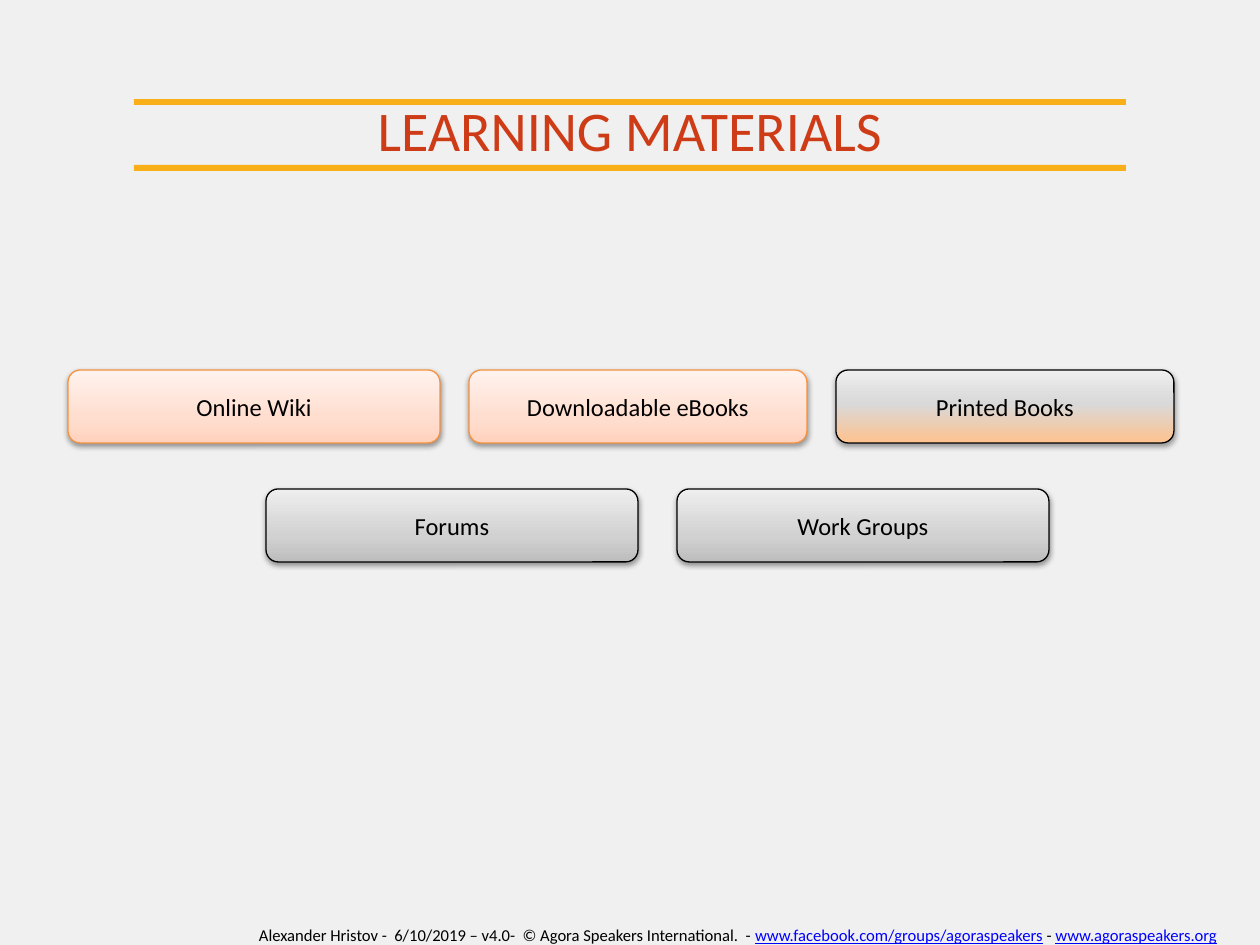
from dataclasses import dataclass

from lxml import etree
from pptx import Presentation
from pptx import util as u
from pptx.dml.color import RGBColor
from pptx.enum import shapes, text
from pptx.oxml import ns

PX = 914400 // 126


@dataclass(frozen=True)
class Theme:
    font: str = "Calibri"
    background: str = "F0F0F0"
    bar: str = "F8AF18"
    title: str = "CE3C17"
    ink: str = "000000"
    web: str = "0000FF"
    accent: str = "F69240"
    title_size: float = 32
    button_size: float = 14
    footer_size: float = 9.5
    peach: tuple = ((0, "FFD2BD"), (35, "FFDED0"), (100, "FFF2ED"))
    mixed: tuple = ((0, "FFC28E"), (54, "D9D9D9"), (100, "EEEEEE"))
    grey: tuple = ((0, "BDBDBD"), (35, "D1D1D1"), (100, "EEEEEE"))


THEME = Theme()


def px(*lengths):
    return [length * PX for length in lengths]


def colour(code):
    return RGBColor.from_string(code)


def style(span, size, code):
    span.font.name = THEME.font
    span.font.size = u.Pt(size)
    span.font.color.rgb = colour(code)


def add_node(parent, tag, **attributes):
    return etree.SubElement(parent, ns.qn(tag), attributes)


def fill_gradient(shape, stops):
    shape.fill.gradient()
    shape.fill.gradient_angle = 90
    stop_list = shape._element.spPr.find(".//" + ns.qn("a:gsLst"))
    for stop in list(stop_list):
        stop_list.remove(stop)
    for position, code in stops:
        stop = add_node(stop_list, "a:gs", pos=str(position * 1000))
        add_node(stop, "a:srgbClr", val=code)


def add_shadow(shape):
    shape.shadow.inherit = False
    effects = shape._element.spPr.find(ns.qn("a:effectLst"))
    shadow = add_node(effects, "a:outerShdw", blurRad="40000", dist="20000",
                      dir="5400000", rotWithShape="0")
    tint = add_node(shadow, "a:srgbClr", val=THEME.ink)
    add_node(tint, "a:alpha", val="38000")


def add_title(page, left, top, width, height):
    for offset in (10, height):
        bar = page.shapes.add_shape(shapes.MSO_SHAPE.RECTANGLE,
                                    *px(left + 133, top + offset, width - 266, 6))
        bar.shadow.inherit = False
        bar.fill.solid()
        bar.fill.fore_color.rgb = colour(THEME.bar)
        bar.line.fill.background()
    title = page.shapes.title
    title.left, title.top, title.width, title.height = px(left, top, width, height)
    frame = title.text_frame
    frame.text = "LEARNING MATERIALS"
    frame.auto_size = text.MSO_AUTO_SIZE.NONE
    frame.vertical_anchor = text.MSO_ANCHOR.TOP
    para = frame.paragraphs[0]
    para.alignment = text.PP_ALIGN.CENTER
    style(para.runs[0], THEME.title_size, THEME.title)


def add_button(page, left, top, width, height, label, stops, outline):
    button = page.shapes.add_shape(shapes.MSO_SHAPE.ROUNDED_RECTANGLE,
                                   *px(left, top, width, height))
    fill_gradient(button, stops)
    button.line.color.rgb = colour(outline)
    button.line.width = u.Pt(0.75)
    add_shadow(button)
    frame = button.text_frame
    frame.text = label
    frame.vertical_anchor = text.MSO_ANCHOR.MIDDLE
    para = frame.paragraphs[0]
    para.alignment = text.PP_ALIGN.CENTER
    style(para.runs[0], THEME.button_size, THEME.ink)


def add_button_row(page, left, top, height, gap, buttons):
    for label, width, stops, outline in buttons:
        add_button(page, left, top, width, height, label, stops, outline)
        left += width + gap


def add_footer(page, left, top, width, height):
    box = page.shapes.add_textbox(*px(left, top, width, height))
    box.text_frame.word_wrap = True
    para = box.text_frame.paragraphs[0]
    para.alignment = text.PP_ALIGN.CENTER
    parts = (
        ("Alexander Hristov -  6/10/2019 – v4.0-  © Agora Speakers International.  - ", False),
        ("www.facebook.com/groups/agoraspeakers", True),
        (" - ", False),
        ("www.agoraspeakers.org", True),
    )
    for wording, is_address in parts:
        span = para.add_run()
        span.text = wording
        style(span, THEME.footer_size, THEME.web if is_address else THEME.ink)
        span.font.underline = is_address


def main():
    deck = Presentation()
    deck.slide_width, deck.slide_height = u.Inches(10), u.Inches(7.5)
    page = deck.slides.add_slide(deck.slide_layouts[5])
    page.background.fill.solid()
    page.background.fill.fore_color.rgb = colour(THEME.background)

    add_title(page, 1, 89, 1258, 76)
    add_button_row(page, 68, 370, 73, 29, (
        ("Online Wiki", 372, THEME.peach, THEME.accent),
        ("Downloadable eBooks", 338, THEME.peach, THEME.accent),
        ("Printed Books", 338, THEME.mixed, THEME.ink),
    ))
    add_button_row(page, 266, 489, 73, 39, (
        ("Forums", 372, THEME.grey, THEME.ink),
        ("Work Groups", 372, THEME.grey, THEME.ink),
    ))
    add_footer(page, 216, 919, 1044, 26)
    deck.save("out.pptx")


if __name__ == "__main__":
    main()
